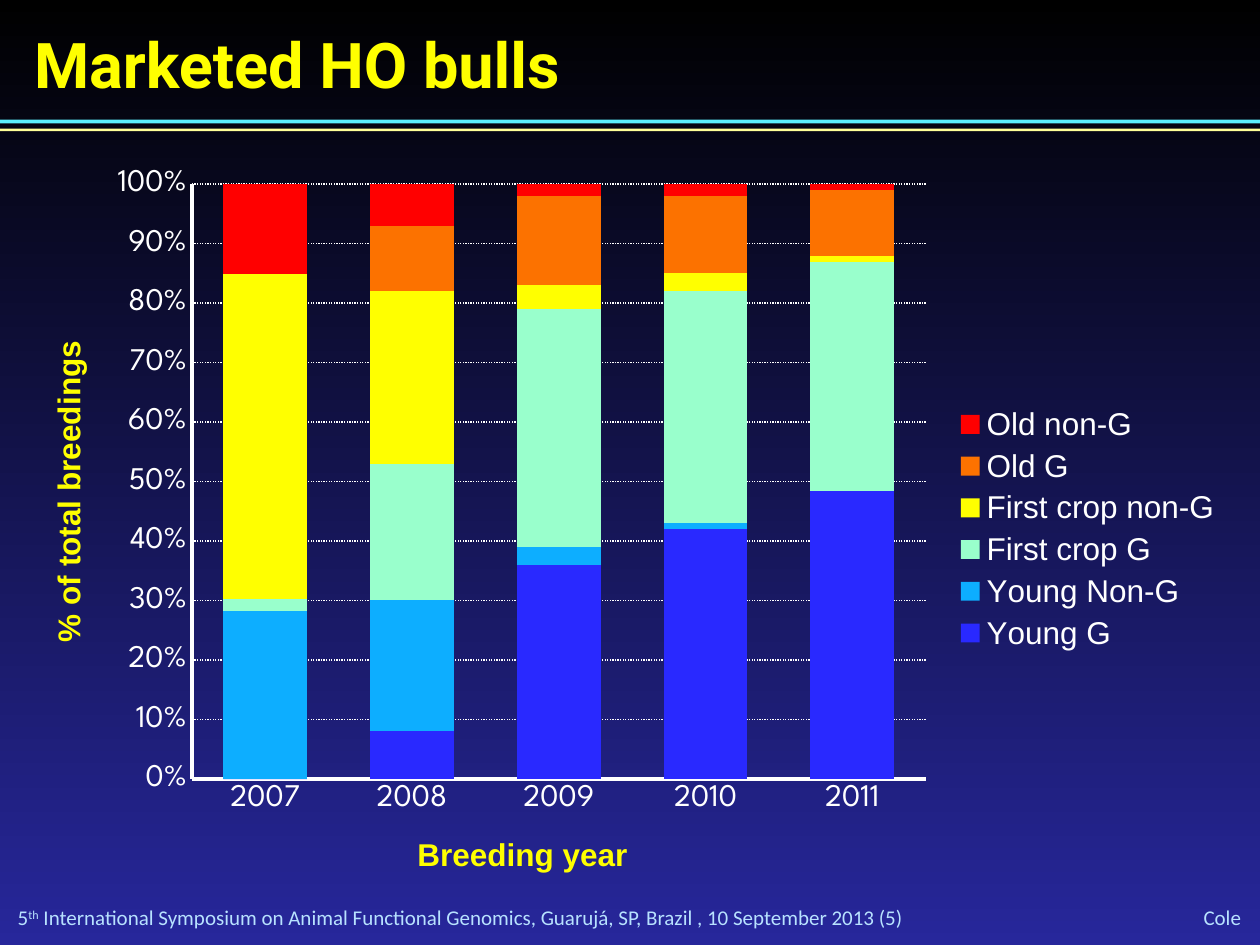
from lxml import etree
from pptx import Presentation
from pptx.chart.data import CategoryChartData
from pptx.dml.color import RGBColor
from pptx.enum.chart import XL_CHART_TYPE, XL_LEGEND_POSITION, XL_TICK_MARK
from pptx.enum.dml import MSO_LINE
from pptx.enum.shapes import MSO_SHAPE
from pptx.enum.text import MSO_ANCHOR, PP_ALIGN
from pptx.oxml.ns import qn
from pptx.util import Inches, Pt

COLORS = {
    "top": "000000", "bottom": "27279B", "cyan": "5BEFFF", "cream": "FFFF99",
    "footer": "B8E2FF", "heading": "FFFF00", "white": "FFFFFF",
}
YEARS = [2007, 2008, 2009, 2010, 2011]
# Bull group, colour, share of breedings per year
BULL_GROUPS = [
    ("Young G", "2929FF", (0, 8, 36, 42, 48)),
    ("Young Non-G", "0DAEFF", (28, 22, 3, 1, 0)),
    ("First crop G", "99FFCC", (2, 23, 40, 39, 38)),
    ("First crop non-G", "FFFF00", (54, 29, 4, 3, 1)),
    ("Old G", "FC7200", (0, 11, 15, 13, 11)),
    ("Old non-G", "FF0000", (15, 7, 2, 2, 1)),
]


def rgb(name):
    return RGBColor.from_string(COLORS[name])


def set_font(font, size, face, color, bold=False):
    font.size, font.name, font.bold = Pt(size), face, bold
    font.color.rgb = rgb(color)


def write(frame, parts, size=12, face="Calibri", color="footer", bold=False,
          align=PP_ALIGN.LEFT, anchor=MSO_ANCHOR.MIDDLE):
    """Fill a text frame; parts are (text, baseline shift in percent)."""
    frame.word_wrap = True
    frame.vertical_anchor = anchor
    frame.margin_left = frame.margin_right = 0
    frame.margin_top = frame.margin_bottom = 0
    paragraph = frame.paragraphs[0]
    paragraph.alignment = align
    for text, shift in parts:
        run = paragraph.add_run()
        run.text = text
        set_font(run.font, size, face, color, bold)
        if shift:
            run._r.get_or_add_rPr().set("baseline", str(shift * 1000))


def add_text(slide, box, parts, **text_format):
    label = slide.shapes.add_textbox(*map(Inches, box))
    write(label.text_frame, parts, **text_format)


def add_rule(slide, top, height, color):
    rule = slide.shapes.add_shape(
        MSO_SHAPE.RECTANGLE, 0, Inches(top), Inches(10), Inches(height))
    rule.shadow.inherit = False
    rule.fill.solid()
    rule.fill.fore_color.rgb = rgb(color)
    rule.line.fill.background()


def place(part, inner=False, **percents):
    """Give a chart part a manual layout in percent of the chart."""
    for old in part.findall(qn("c:layout")):
        part.remove(old)
    layout = etree.Element(qn("c:layout"))
    manual = etree.SubElement(layout, qn("c:manualLayout"))
    settings = {"layoutTarget": "inner"} if inner else {}
    settings.update(xMode="edge", yMode="edge")
    settings.update({tag: value / 100 for tag, value in percents.items()})
    for tag, value in settings.items():
        etree.SubElement(manual, qn(f"c:{tag}")).set("val", str(value))
    before = [child for child in part
              if child.tag in (qn("c:tx"), qn("c:legendPos"))]
    part.insert(len(before), layout)


def style_axis(axis, title, x, y):
    axis.major_tick_mark = axis.minor_tick_mark = XL_TICK_MARK.NONE
    axis.format.line.color.rgb = rgb("white")
    axis.format.line.width = Pt(2)
    set_font(axis.tick_labels.font, 18, "League Spartan", "white")
    run = axis.axis_title.text_frame.paragraphs[0].add_run()
    run.text = title
    set_font(run.font, 18, "Arial", "heading", bold=True)
    place(axis.axis_title._element, x=x, y=y)


def add_breedings_chart(slide):
    shares = CategoryChartData(number_format="0")
    shares.categories = YEARS
    for name, _, values in BULL_GROUPS:
        shares.add_series(name, values)
    chart = slide.shapes.add_chart(
        XL_CHART_TYPE.COLUMN_STACKED_100,
        *map(Inches, (0.19, 1.23, 9.62, 5.94)), shares).chart
    chart.has_title = False
    set_font(chart.font, 18, "Arial", "white")

    # Stacked columns
    plot = chart.plots[0]
    plot.gap_width, plot.overlap = 75, 100
    plot.vary_by_categories = False
    for series, (_, color, _) in zip(plot.series, BULL_GROUPS):
        series.format.fill.solid()
        series.format.fill.fore_color.rgb = RGBColor.from_string(color)
    plot_area = chart._chartSpace.chart.plotArea
    place(plot_area, inner=True, x=13.85, y=3.9, w=60.55, h=79.5)

    # Axes and gridlines
    style_axis(chart.category_axis, "Breeding year", 32, 90)
    style_axis(chart.value_axis, "% of total breedings", 1.5, 24.1)
    percent = chart.value_axis
    percent.minimum_scale, percent.maximum_scale = 0, 1
    percent.major_unit = 0.1
    percent.tick_labels.number_format = "0%"
    percent.tick_labels.number_format_is_linked = False
    gridline = percent.major_gridlines.format.line
    gridline.color.rgb = rgb("white")
    gridline.width = Pt(0.75)
    gridline.dash_style = MSO_LINE.ROUND_DOT

    # Legend
    chart.has_legend = True
    chart.legend.position = XL_LEGEND_POSITION.RIGHT
    chart.legend.include_in_layout = False
    set_font(chart.legend.font, 18, "Arial", "white")
    place(chart.legend._element, x=76.75, y=32.8, w=22, h=34.3)


def add_background(slide):
    fill = slide.background.fill
    fill.gradient()
    fill.gradient_angle = 270
    for stop, color in zip(fill.gradient_stops, ("top", "bottom")):
        stop.color.rgb = rgb(color)


def main():
    prs = Presentation()
    prs.slide_width, prs.slide_height = Inches(10), Inches(7.5)
    slide = prs.slides.add_slide(prs.slide_layouts[5])
    add_background(slide)

    # Title and rules
    title = slide.shapes.title
    title.left, title.top = Inches(0.27), Inches(0.2)
    title.width, title.height = Inches(9), Inches(0.6)
    write(title.text_frame, [("Marketed HO bulls", 0)], size=36, face="Roboto",
          color="heading", bold=True, anchor=MSO_ANCHOR.TOP)
    add_rule(slide, 0.95, 0.03, "cyan")
    add_rule(slide, 1.02, 0.02, "cream")

    add_breedings_chart(slide)

    # Footer
    add_text(slide, (0.14, 7.18, 8.81, 0.2), [
        ("5", 0), ("th", 30),
        (" International Symposium on Animal Functional Genomics, "
         "Guarujá, SP, Brazil , 10 September 2013 (5)", 0)])
    add_text(slide, (8.72, 7.17, 1.13, 0.21), [("Cole", 0)],
             align=PP_ALIGN.RIGHT)
    prs.save("out.pptx")


if __name__ == "__main__":
    main()
